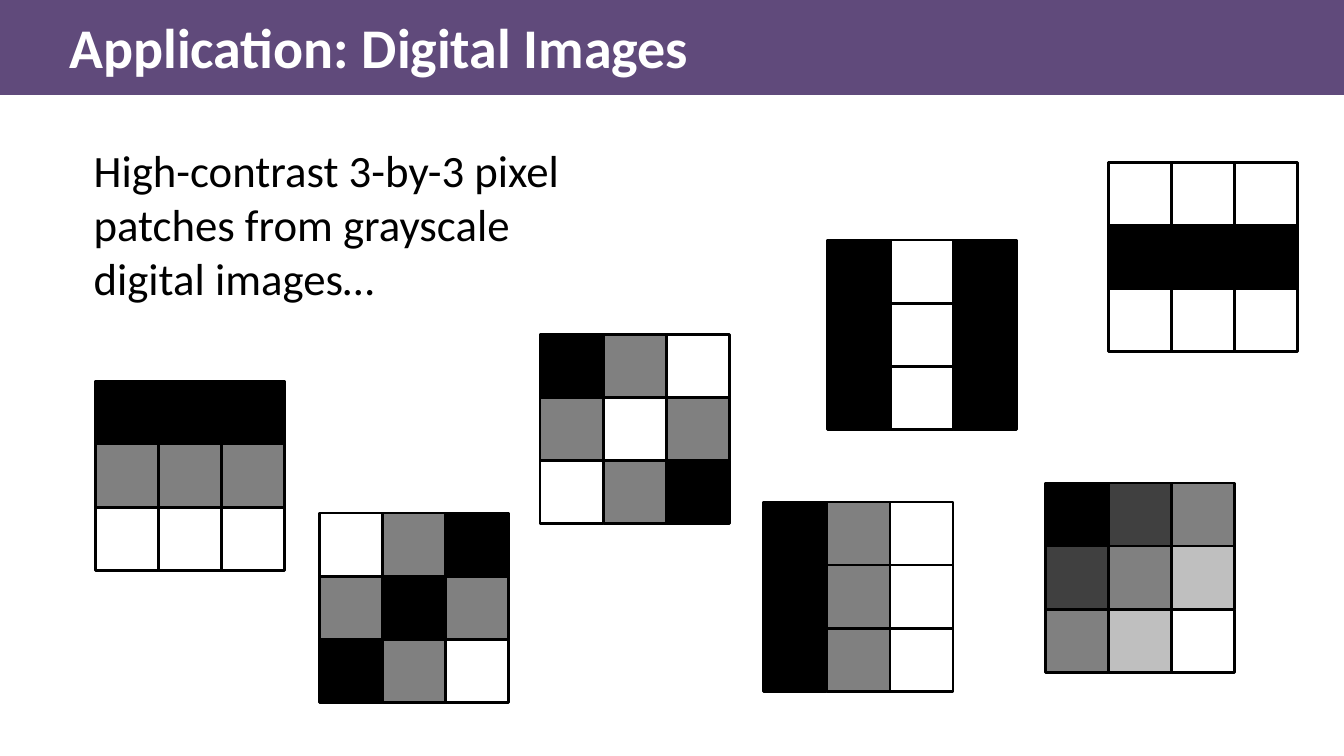
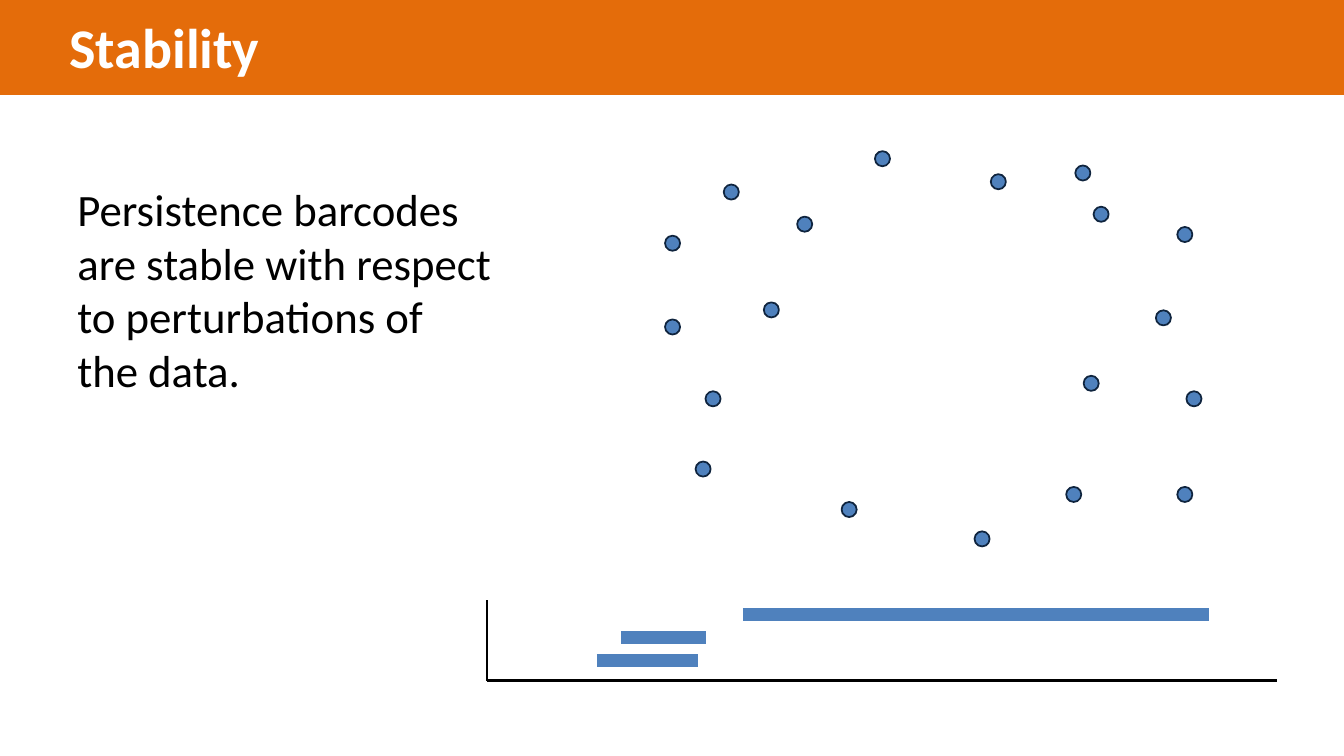
from lxml.etree import SubElement
from pptx import Presentation
from pptx.dml.color import RGBColor
from pptx.enum.shapes import MSO_CONNECTOR, MSO_SHAPE
from pptx.oxml.ns import qn
from pptx.util import Cm, Pt

# Shared style, lengths in cm
WIDTH, HEIGHT, BAND = 33.87, 19.05, 2.39
BLACK, WHITE, BLUE, NAVY = "000000", "FFFFFF", "4F81BD", "0F243E"
TITLE = {"name": "Calibri", "size": Pt(40), "bold": True}
BODY = {"name": "Calibri", "size": Pt(32)}

# Slide 1: pixel patches as (left, top, rows of gray levels 0 to 4)
IMAGES = {
    "title": "Application: Digital Images",
    "band": "604A7B",
    "body": "High-contrast 3-by-3 pixel patches from grayscale digital images…",
    "body_box": (2.11, 3.48, 13.97, 4.37),
}
GRAYS = [BLACK, "404040", "808080", "BFBFBF", WHITE]
CELL = 1.59
PATCHES = [
    (13.61, 8.43, ["024", "242", "420"]),
    (2.41, 9.6, ["000", "222", "444"]),
    (27.94, 4.09, ["444", "000", "444"]),
    (26.34, 12.17, ["012", "123", "234"]),
    (20.85, 6.05, ["040", "040", "040"]),
    (19.25, 12.65, ["024", "024", "024"]),
    (8.05, 12.93, ["420", "202", "024"]),
]

# Slide 2: point cloud as (left, top), barcode as (start, end) from the bottom up
STABILITY = {
    "title": "Stability",
    "band": "E46C0A",
    "body": "Persistence barcodes are stable with respect to perturbations of the data.",
    "body_box": (1.7, 4.45, 11, 5.74),
}
DOT = 0.38
POINTS = [
    (16.76, 5.94), (20.09, 5.46), (22.05, 3.81), (24.97, 4.39), (27.1, 4.17),
    (29.9, 9.86), (26.87, 12.27), (24.56, 13.39), (21.21, 12.65), (17.53, 11.63),
    (16.76, 8.05), (27.31, 9.47), (17.78, 9.86), (29.13, 7.82), (27.56, 5.21),
    (29.67, 12.27), (19.25, 7.62), (18.24, 4.65), (29.67, 5.72),
]
BARS = [(15.04, 17.58), (15.65, 17.78), (18.72, 30.48)]
BAR_BOTTOM, BAR_STEP = 16.64, 0.58
AXIS_LEFT, AXIS_RIGHT, AXIS_TOP, AXIS_BOTTOM = 12.27, 32.18, 15.11, 17.15


def rgb(value):
    return RGBColor.from_string(value)


def add_shape(shapes, kind, box, fill, line=None, weight=0):
    sp = shapes.add_shape(kind, *map(Cm, box))
    sp.shadow.inherit = False
    sp.fill.solid()
    sp.fill.fore_color.rgb = rgb(fill)
    if line:
        sp.line.color.rgb = rgb(line)
        sp.line.width = Pt(weight)
    else:
        sp.line.fill.background()
    return sp


def add_text(s, box, text, style, color, wrap=True):
    tf = s.shapes.add_textbox(*map(Cm, box)).text_frame
    tf.word_wrap = wrap
    r = tf.paragraphs[0].add_run()
    r.text = text
    for key, value in style.items():
        setattr(r.font, key, value)
    r.font.color.rgb = rgb(color)


def add_line(s, start, end, color, weight):
    line = s.shapes.add_connector(MSO_CONNECTOR.STRAIGHT, *map(Cm, start + end))
    line.line.color.rgb = rgb(color)
    line.line.width = Pt(weight)
    SubElement(line._element.spPr, qn("a:effectLst"))


def add_slide(prs, content):
    s = prs.slides.add_slide(prs.slide_layouts[6])
    add_shape(s.shapes, MSO_SHAPE.RECTANGLE, (0, 0, WIDTH, BAND), content["band"])
    add_text(s, (1.5, 0.2, 16.3, 1.96), content["title"], TITLE, WHITE, wrap=False)
    add_text(s, content["body_box"], content["body"], BODY, BLACK)
    return s


def add_patch(s, left, top, rows):
    group = s.shapes.add_group_shape()
    for i, row in enumerate(rows):
        for j, level in enumerate(row):
            box = (left + j * CELL, top + i * CELL, CELL, CELL)
            add_shape(group.shapes, MSO_SHAPE.RECTANGLE, box, GRAYS[int(level)], BLACK, 2)


def build_images(prs):
    s = add_slide(prs, IMAGES)
    for patch in PATCHES:
        add_patch(s, *patch)


def build_stability(prs):
    s = add_slide(prs, STABILITY)
    for point in POINTS:
        add_shape(s.shapes, MSO_SHAPE.OVAL, point + (DOT, DOT), BLUE, NAVY, 1.25)
    # Barcode and its axes
    for i, (start, end) in enumerate(BARS):
        y = BAR_BOTTOM - i * BAR_STEP
        add_line(s, (start, y), (end, y), BLUE, 9)
    corner = (AXIS_LEFT, AXIS_BOTTOM)
    for end in [(AXIS_RIGHT, AXIS_BOTTOM), (AXIS_LEFT, AXIS_TOP)]:
        add_line(s, corner, end, BLACK, 1.75)


def main():
    prs = Presentation()
    prs.slide_width, prs.slide_height = Cm(WIDTH), Cm(HEIGHT)
    build_images(prs)
    build_stability(prs)
    prs.save("out.pptx")


if __name__ == "__main__":
    main()
